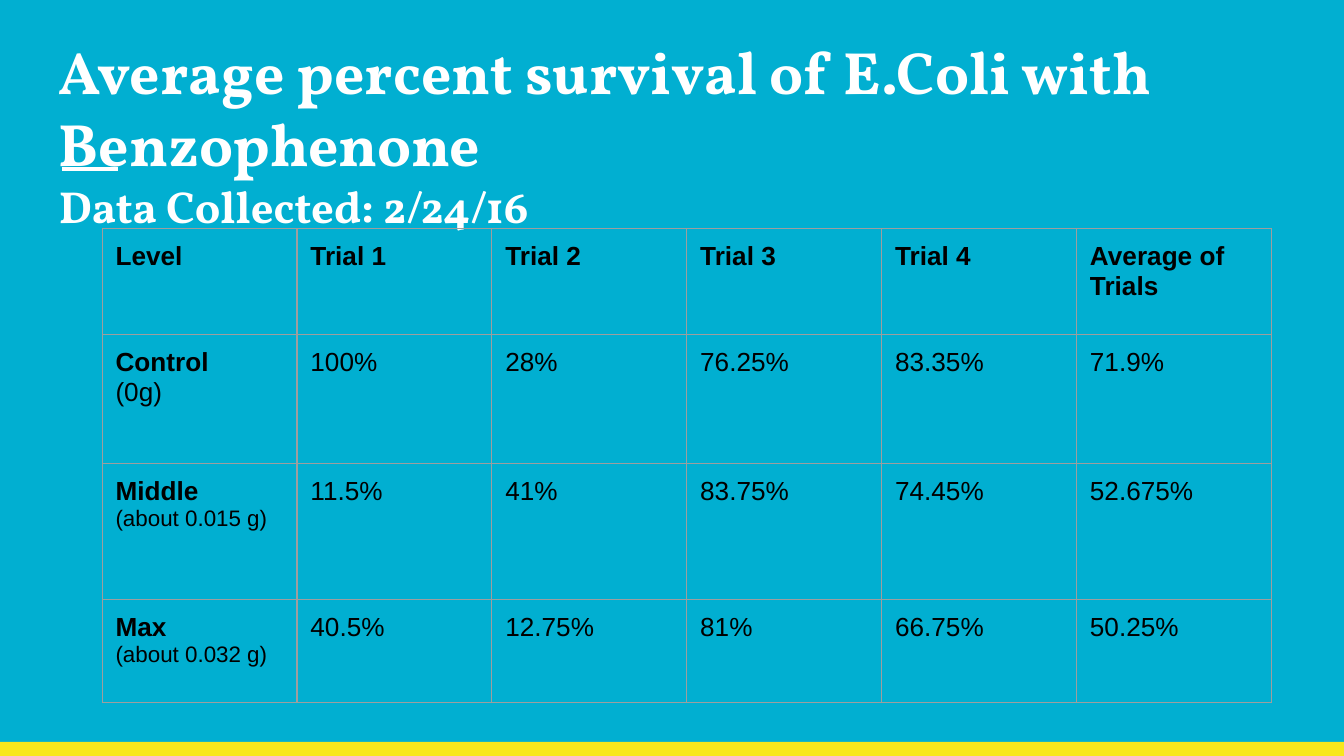
from typing import NamedTuple

from lxml.etree import SubElement
from pptx import Presentation
from pptx.dml.color import RGBColor
from pptx.enum.shapes import MSO_CONNECTOR, MSO_SHAPE
from pptx.enum.text import MSO_ANCHOR
from pptx.oxml.ns import qn
from pptx.util import Inches, Pt

COLORS = {
    "background": "01AFD1",
    "footer": "F8E71C",
    "title": "FFFFFF",
    "text": "000000",
    "border": "9E9E9E",
}
SLIDE_WIDTH = 10
SLIDE_HEIGHT = SLIDE_WIDTH * 9 / 16
INSET = Inches(0.1)
COLUMN_WIDTH = 1.45
BORDER_WIDTH = Pt(0.75)


class Line(NamedTuple):
    text: str
    size: int
    bold: bool = False
    font: str = "Arial"
    color: str = "text"


class Level(NamedTuple):
    height: float
    label: list[Line]
    values: list[str]


TITLE = [
    Line("Average percent survival of E.Coli with Benzophenone", 32, True, "Vollkorn", "title"),
    Line("Data Collected: 2/24/16", 24, True, "Vollkorn", "title"),
]
HEADINGS = ["Level", "Trial 1", "Trial 2", "Trial 3", "Trial 4", "Average of Trials"]
HEADING_HEIGHT = 0.79
LEVELS = [
    Level(0.96, [Line("Control", 14, True), Line("(0g)", 14)],
          ["100%", "28%", "76.25%", "83.35%", "71.9%"]),
    Level(1.01, [Line("Middle", 14, True), Line("(about 0.015 g)", 12)],
          ["11.5%", "41%", "83.75%", "74.45%", "52.675%"]),
    Level(0.77, [Line("Max", 14, True), Line("(about 0.032 g)", 12)],
          ["40.5%", "12.75%", "81%", "66.75%", "50.25%"]),
]


def color(name: str) -> RGBColor:
    return RGBColor.from_string(COLORS[name])


def write_lines(text_frame, lines: list[Line]) -> None:
    text_frame.text = "\n".join(line.text for line in lines)
    for para, line in zip(text_frame.paragraphs, lines):
        font = para.runs[0].font
        font.name = line.font
        font.size = Pt(line.size)
        font.bold = line.bold
        font.color.rgb = color(line.color)


def set_borders(cell) -> None:
    properties = cell._tc.get_or_add_tcPr()
    for position, side in enumerate(("lnL", "lnR", "lnT", "lnB")):
        border = SubElement(properties, qn(f"a:{side}"), w=str(BORDER_WIDTH))
        fill = SubElement(border, qn("a:solidFill"))
        SubElement(fill, qn("a:srgbClr"), val=COLORS["border"])
        properties.insert(position, border)


def fill_cell(cell, lines: list[Line]) -> None:
    cell.margin_left = cell.margin_right = INSET
    cell.margin_top = cell.margin_bottom = INSET
    cell.vertical_anchor = MSO_ANCHOR.TOP
    cell.fill.background()
    set_borders(cell)
    write_lines(cell.text_frame, lines)


def add_footer(slide) -> None:
    bar = slide.shapes.add_shape(
        MSO_SHAPE.RECTANGLE, 0, Inches(5.52), Inches(SLIDE_WIDTH), Inches(SLIDE_HEIGHT - 5.52))
    bar.shadow.inherit = False
    bar.fill.solid()
    bar.fill.fore_color.rgb = color("footer")
    bar.line.fill.background()


def add_accent(slide) -> None:
    accent = slide.shapes.add_connector(
        MSO_CONNECTOR.STRAIGHT, Inches(0.46), Inches(1.26), Inches(0.88), Inches(1.26))
    accent.line.color.rgb = color("title")
    accent.line.width = Pt(2.25)
    SubElement(accent._element.spPr, qn("a:effectLst"))


def add_title(slide) -> None:
    box = slide.shapes.add_textbox(Inches(0.34), Inches(0.16), Inches(9.32), Inches(0.88))
    frame = box.text_frame
    frame.word_wrap = True
    frame.vertical_anchor = MSO_ANCHOR.TOP
    frame.margin_left = frame.margin_right = INSET
    frame.margin_top = frame.margin_bottom = INSET
    write_lines(frame, TITLE)


def add_survival_table(slide) -> None:
    rows = [[[Line(heading, 14, True)] for heading in HEADINGS]]
    rows += [[level.label] + [[Line(value, 14)] for value in level.values] for level in LEVELS]
    heights = [HEADING_HEIGHT] + [level.height for level in LEVELS]

    table = slide.shapes.add_table(
        len(rows), len(HEADINGS), Inches(0.76), Inches(1.7),
        Inches(COLUMN_WIDTH * len(HEADINGS)), Inches(sum(heights))).table
    table.first_row = table.horz_banding = False
    for column in table.columns:
        column.width = Inches(COLUMN_WIDTH)
    for row, height, contents in zip(table.rows, heights, rows):
        row.height = Inches(height)
        for cell, lines in zip(row.cells, contents):
            fill_cell(cell, lines)


def main() -> None:
    deck = Presentation()
    deck.slide_width, deck.slide_height = Inches(SLIDE_WIDTH), Inches(SLIDE_HEIGHT)
    slide = deck.slides.add_slide(deck.slide_layouts[6])
    slide.background.fill.solid()
    slide.background.fill.fore_color.rgb = color("background")
    add_footer(slide)
    add_accent(slide)
    add_title(slide)
    add_survival_table(slide)
    deck.save("out.pptx")


if __name__ == "__main__":
    main()
